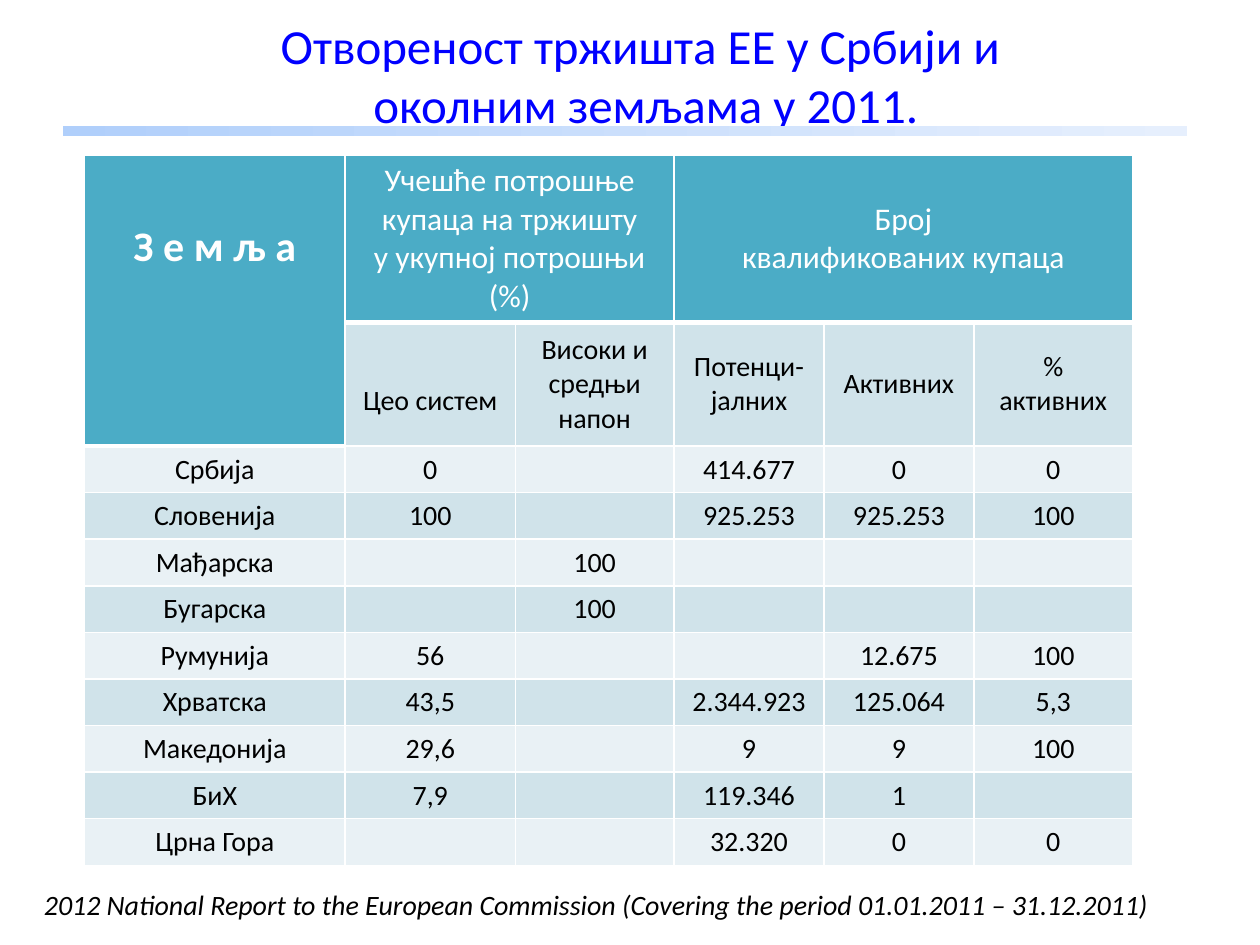
from lxml.etree import SubElement
from pptx import Presentation
from pptx.dml.color import RGBColor
from pptx.enum.shapes import MSO_SHAPE
from pptx.enum.text import MSO_ANCHOR, PP_ALIGN
from pptx.oxml.ns import qn
from pptx.util import Inches, Pt

WIDTH, HEIGHT = Inches(10), Inches(7.5)
TEAL, DARK_BAND, LIGHT_BAND = "4BACC6", "D0E3EA", "E9F1F5"
WHITE, BLACK, BLUE = "FFFFFF", "000000", "0000FF"

COLUMN_WIDTHS = [2.07, 1.35, 1.26, 1.19, 1.19, 1.26]
ROW_HEIGHTS = [1.33, 0.97] + [0.37] * 9

GROUP_HEADS = {
    0: "З е м љ а",
    1: "Учешће потрошње купаца на тржишту\nу укупној потрошњи (%)",
    3: "Број\nквалификованих купаца",
}
SUBHEADS = ["Цео систем", "Високи и средњи напон", "Потенци-јалних",
            "Активних", "%\nактивних"]
COUNTRIES = [
    ["Србија", "0", "", "414.677", "0", "0"],
    ["Словенија", "100", "", "925.253", "925.253", "100"],
    ["Мађарска", "", "100", "", "", ""],
    ["Бугарска", "", "100", "", "", ""],
    ["Румунија", "56", "", "", "12.675", "100"],
    ["Хрватска", "43,5", "", "2.344.923", "125.064", "5,3"],
    ["Македонија", "29,6", "", "9", "9", "100"],
    ["БиХ", "7,9", "", "119.346", "1", ""],
    ["Црна Гора", "", "", "32.320", "0", "0"],
]


def rgb(value):
    return RGBColor.from_string(value)


def set_all(target, values):
    for name, value in values.items():
        setattr(target, name, value)


def share(left, top, width, height):
    """Turn shares of the slide's size into a position and a size."""
    return [round(part * whole) for part, whole in
            zip((left, top, width, height), (WIDTH, HEIGHT, WIDTH, HEIGHT))]


def write(frame, text, size, color, align=PP_ALIGN.CENTER, **font_format):
    frame.text = text
    for paragraph in frame.paragraphs:
        paragraph.alignment = align
        set_all(paragraph.font, {"name": "Calibri", "size": Pt(size), **font_format})
        paragraph.font.color.rgb = rgb(color)
        for run in paragraph.runs:
            set_all(run.font, {"name": "Calibri", "size": Pt(size), **font_format})
            run.font.color.rgb = rgb(color)


def add_text(slide, box, text, size, color, anchor=MSO_ANCHOR.TOP, **text_format):
    frame = slide.shapes.add_textbox(*share(*box)).text_frame
    set_all(frame, {"word_wrap": True, "vertical_anchor": anchor})
    write(frame, text, size, color, **text_format)


def add_title_rule(slide):
    rule = slide.shapes.add_shape(MSO_SHAPE.RECTANGLE, *share(0.05, 0.133, 0.892, 0.011))
    rule.shadow.inherit = False
    rule.line.fill.background()
    rule.fill.gradient()
    rule.fill.gradient_angle = 0
    for stop, color in zip(rule.fill.gradient_stops, ("B0CFFB", "E6EFFD")):
        stop.color.rgb = rgb(color)


def style_cell(cell, fill, bottom_width=1):
    properties = cell._tc.get_or_add_tcPr()
    for side, width in {"L": 1, "R": 1, "T": 1, "B": bottom_width}.items():
        line = SubElement(properties, qn(f"a:ln{side}"), w=str(Pt(width)))
        SubElement(SubElement(line, qn("a:solidFill")), qn("a:srgbClr"), val=WHITE)
    cell.fill.solid()
    cell.fill.fore_color.rgb = rgb(fill)


def fill_heads(table):
    for column in range(len(COLUMN_WIDTHS)):
        style_cell(table.cell(0, column), TEAL, bottom_width=3)
    style_cell(table.cell(1, 0), TEAL, bottom_width=3)
    for start, end in (((0, 0), (1, 0)), ((0, 1), (0, 2)), ((0, 3), (0, 5))):
        table.cell(*start).merge(table.cell(*end))
    for column, text in GROUP_HEADS.items():
        cell = table.cell(0, column)
        is_country = column == 0
        write(cell.text_frame, text, 24 if is_country else 18, WHITE, bold=is_country)
        cell.vertical_anchor = MSO_ANCHOR.TOP if is_country else MSO_ANCHOR.MIDDLE
    table.cell(0, 0).margin_top = Inches(0.53)

    for column, text in enumerate(SUBHEADS, start=1):
        cell = table.cell(1, column)
        style_cell(cell, DARK_BAND)
        write(cell.text_frame, text, 16, BLACK)
        cell.vertical_anchor = MSO_ANCHOR.MIDDLE
    table.cell(1, 1).margin_top = Inches(0.32)


def fill_countries(table):
    for row, values in enumerate(COUNTRIES, start=2):
        for column, value in enumerate(values):
            cell = table.cell(row, column)
            style_cell(cell, DARK_BAND if row % 2 else LIGHT_BAND)
            write(cell.text_frame, value, 16, BLACK)


def add_market_table(slide):
    table = slide.shapes.add_table(len(ROW_HEIGHTS), len(COLUMN_WIDTHS),
                                   *share(0.067, 0.164, 0.832, 0.75)).table
    set_all(table, {"first_row": False, "horz_banding": False})
    for column, width in zip(table.columns, COLUMN_WIDTHS):
        column.width = Inches(width)
    for row, height in zip(table.rows, ROW_HEIGHTS):
        row.height = Inches(height)
    fill_heads(table)
    fill_countries(table)


def main():
    presentation = Presentation()
    set_all(presentation, {"slide_width": WIDTH, "slide_height": HEIGHT})
    slide = presentation.slides.add_slide(presentation.slide_layouts[6])
    add_text(slide, (0.025, 0.023, 0.975, 0.111),
             "Отвореност тржишта ЕЕ у Србији и \vоколним земљама у 2011.",
             28, BLUE, MSO_ANCHOR.MIDDLE)
    add_title_rule(slide)
    add_market_table(slide)
    add_text(slide, (0.025, 0.933, 0.975, 0.049),
             "2012 National Report to the European Commission "
             "(Covering the period 01.01.2011 – 31.12.2011)",
             16, BLACK, align=PP_ALIGN.LEFT, italic=True)
    presentation.save("out.pptx")


if __name__ == "__main__":
    main()
